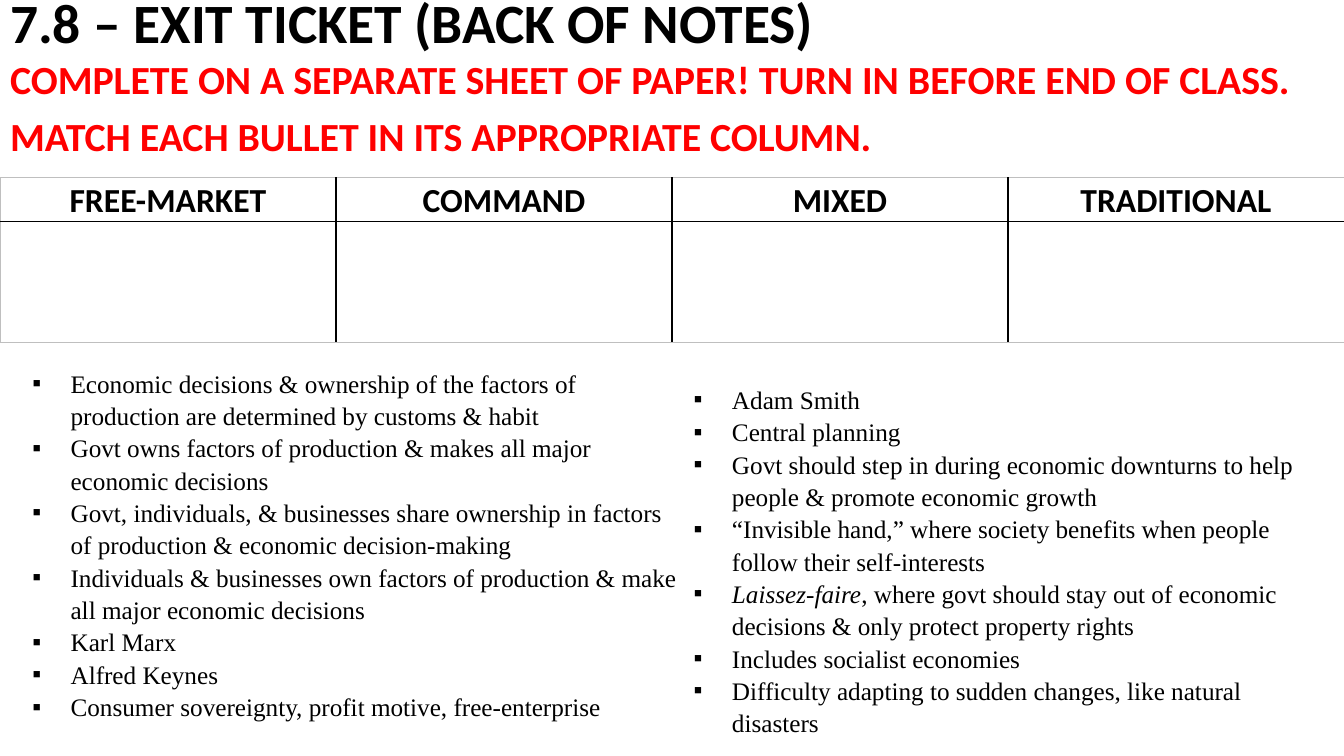
from dataclasses import dataclass

from lxml.etree import SubElement
from pptx import Presentation
from pptx.dml.color import RGBColor
from pptx.enum.text import MSO_ANCHOR, MSO_AUTO_SIZE, PP_ALIGN
from pptx.oxml import parse_xml
from pptx.oxml.ns import nsdecls, qn
from pptx.util import Inches, Pt

TITLE = "7.8 – EXIT TICKET (BACK OF NOTES)"
INSTRUCTIONS = [
    "COMPLETE ON A SEPARATE SHEET OF PAPER! TURN IN BEFORE END OF CLASS.",
    "MATCH EACH BULLET IN ITS APPROPRIATE COLUMN.",
]
ECONOMIES = ["FREE-MARKET", "COMMAND", "MIXED", "TRADITIONAL"]
LEFT_CLUES = [
    "Economic decisions & ownership of the factors of production are determined by customs & habit",
    "Govt owns factors of production & makes all major economic decisions",
    "Govt, individuals, & businesses share ownership in factors of production & economic decision-making",
    "Individuals & businesses own factors of production & make all major economic decisions",
    "Karl Marx",
    "Alfred Keynes",
    "Consumer sovereignty, profit motive, free-enterprise",
]
# A tuple holds an italic opening and the plain text after it.
RIGHT_CLUES = [
    "Adam Smith",
    "Central planning",
    "Govt should step in during economic downturns to help people & promote economic growth",
    "“Invisible hand,” where society benefits when people follow their self-interests",
    ("Laissez-faire", ", where govt should stay out of economic decisions & only protect property rights"),
    "Includes socialist economies",
    "Difficulty adapting to sudden changes, like natural disasters",
]


@dataclass(frozen=True)
class Theme:
    black: str = "000000"
    red: str = "FF0000"
    edge: str = "BFBFBF"
    heading_font: str = "Calibri"
    list_font: str = "Times New Roman"
    title_size: float = 39.6
    instruction_size: float = 28.5
    header_size: float = 24
    list_size: float = 18


THEME = Theme()
SLIDE_W, SLIDE_H = 13.33, 7.5
ROW_HEIGHTS = [0.42, 1.2]
BULLET_INDENT = 0.38


def write(tf, lines, *, size, font=THEME.heading_font, color=THEME.black, bold=True,
          align=PP_ALIGN.LEFT, spacing=0.9, before=0, bullet=None):
    for i, line in enumerate(lines):
        p = tf.paragraphs[0] if i == 0 else tf.add_paragraph()
        p.alignment, p.line_spacing = align, spacing
        p.space_before, p.space_after = Pt(before), Pt(0)
        indent = Inches(BULLET_INDENT) if bullet else 0
        pPr = p._p.get_or_add_pPr()
        pPr.set("marL", str(indent))
        pPr.set("indent", str(-indent))
        if bullet:
            SubElement(pPr, qn("a:buFont"), typeface=font)
            SubElement(pPr, qn("a:buChar"), char=bullet)
        else:
            SubElement(pPr, qn("a:buNone"))
        parts = line if isinstance(line, tuple) else (line,)
        for j, part in enumerate(parts):
            r = p.add_run()
            r.text = part
            r.font.name, r.font.size, r.font.bold = font, Pt(size), bold
            r.font.italic = len(parts) > 1 and j == 0
            r.font.color.rgb = RGBColor.from_string(color)


def place(sp, left, top, width, height, anchor=MSO_ANCHOR.TOP):
    sp.left, sp.top, sp.width, sp.height = map(Inches, (left, top, width, height))
    tf = sp.text_frame
    tf.word_wrap, tf.auto_size, tf.vertical_anchor = True, MSO_AUTO_SIZE.NONE, anchor
    return tf


def set_borders(cell, outer_sides):
    """Draw light lines on the table's outer sides and black ones inside."""
    tcPr = cell._tc.get_or_add_tcPr()
    for i, side in enumerate("LRTB"):
        color, width = (THEME.edge, 0.5) if side in outer_sides else (THEME.black, 1)
        tcPr.insert(i, parse_xml(
            f'<a:ln{side} {nsdecls("a")} w="{Pt(width)}"><a:solidFill>'
            f'<a:srgbClr val="{color}"/></a:solidFill></a:ln{side}>'))


def add_economy_table(s):
    n_rows, n_cols = len(ROW_HEIGHTS), len(ECONOMIES)
    table = s.shapes.add_table(n_rows, n_cols, 0, Inches(1.76), Inches(SLIDE_W),
                               Inches(sum(ROW_HEIGHTS))).table
    table.first_row = table.horz_banding = False
    for row, height in zip(table.rows, ROW_HEIGHTS):
        row.height = Inches(height)
    for r in range(n_rows):
        for c in range(n_cols):
            cell = table.cell(r, c)
            cell.margin_left = cell.margin_right = Inches(0.07)
            cell.margin_top = cell.margin_bottom = 0
            cell.fill.background()
            edges = {"L": c == 0, "R": c == n_cols - 1, "T": r == 0, "B": r == n_rows - 1}
            set_borders(cell, [side for side, outer in edges.items() if outer])
    for c, name in enumerate(ECONOMIES):
        write(table.cell(0, c).text_frame, [name], size=THEME.header_size,
              align=PP_ALIGN.CENTER, spacing=1.07)


def main():
    prs = Presentation()
    prs.slide_width, prs.slide_height = Inches(SLIDE_W), Inches(SLIDE_H)
    s = prs.slides.add_slide(prs.slide_layouts.get_by_name("Comparison"))
    title, instructions, left_list, spare, right_list = s.placeholders
    spare.element.getparent().remove(spare.element)

    write(place(title, 0, 0, SLIDE_W, 0.5, MSO_ANCHOR.MIDDLE), [TITLE], size=THEME.title_size)
    write(place(instructions, 0, 0.55, SLIDE_W, 1.13), INSTRUCTIONS,
          size=THEME.instruction_size, color=THEME.red, before=10)
    for sp, clues, box in [(left_list, LEFT_CLUES, (0.22, 3.58, 6.67, 3.67)),
                           (right_list, RIGHT_CLUES, (6.78, 3.74, 6.56, 3.67))]:
        write(place(sp, *box), clues, size=THEME.list_size, font=THEME.list_font,
              bold=False, spacing=1.07, bullet="▪")
    add_economy_table(s)
    prs.save("out.pptx")


if __name__ == "__main__":
    main()
